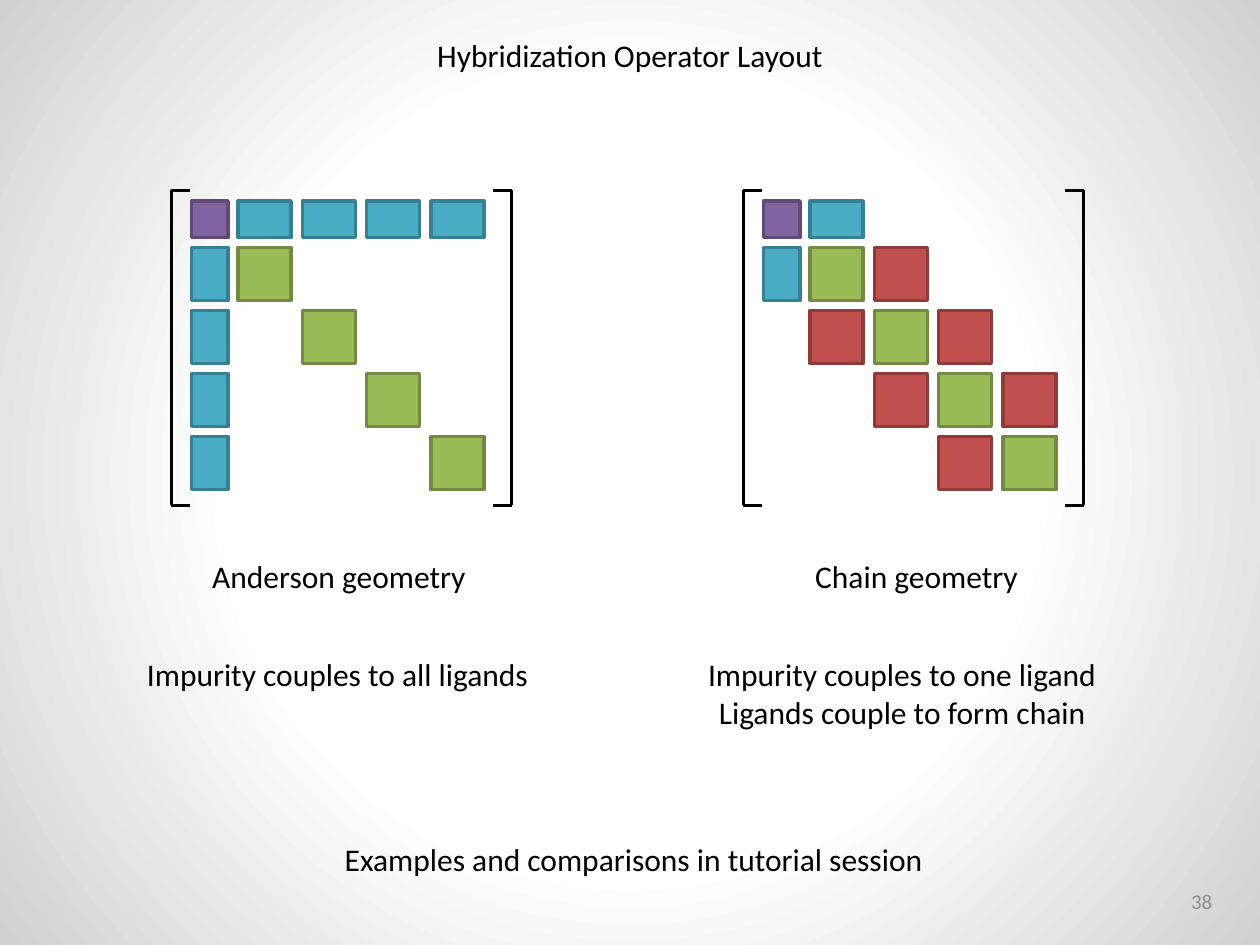
from dataclasses import dataclass

from pptx import Presentation
from pptx.dml.color import RGBColor
from pptx.enum.shapes import MSO_CONNECTOR, MSO_SHAPE
from pptx.enum.text import MSO_ANCHOR, MSO_AUTO_SIZE, PP_ALIGN
from pptx.oxml import parse_xml
from pptx.oxml.ns import nsdecls
from pptx.util import Inches, Pt


@dataclass(frozen=True)
class Theme:
    font: str = "Calibri"
    body: int = 18
    small: int = 12
    ink: str = "000000"
    grey: str = "8C8C8C"
    glow: str = "FFFFFF"
    edge: str = "D1D1D1"
    rim: float = 2
    stroke: float = 1.5


THEME = Theme()
# Fill and outline of each kind of block
BLOCKS = {
    "P": ("8064A2", "5F4A78"),  # impurity
    "C": ("4BACC6", "377F92"),  # impurity-ligand coupling
    "G": ("9BBB59", "738A42"),  # ligand
    "R": ("C0504D", "8E3B39"),  # ligand-ligand coupling
}
ANDERSON = ("PCCCC", "CG...", "C.G..", "C..G.", "C...G")
CHAIN = ("PC...", "CGR..", ".RGR.", "..RGR", "...RG")
COLS, ROWS = 100, 75  # slide grid, one tenth of an inch a step


def unit(*steps):
    """Turn grid steps into lengths."""
    return [Inches(step / 10) for step in steps]


def color(code):
    return RGBColor.from_string(code)


def paint(slide):
    """Give the slide a round glow, bright in the middle."""
    stops = ((0, THEME.glow), (51, THEME.glow), (100, THEME.edge))
    marks = "".join(
        f'<a:gs pos="{pos * 1000}"><a:srgbClr val="{code}"/></a:gs>'
        for pos, code in stops
    )
    slide.element.cSld.insert(0, parse_xml(
        f'<p:bg {nsdecls("p", "a")}><p:bgPr><a:gradFill rotWithShape="1">'
        f'<a:gsLst>{marks}</a:gsLst><a:path path="circle">'
        '<a:fillToRect l="50000" t="50000" r="50000" b="50000"/></a:path>'
        '</a:gradFill><a:effectLst/></p:bgPr></p:bg>'
    ))


def label(slide, box, *lines):
    frame = slide.shapes.add_textbox(*unit(*box)).text_frame
    frame.word_wrap = False
    frame.auto_size = MSO_AUTO_SIZE.SHAPE_TO_FIT_TEXT
    write(frame, lines, THEME.body, THEME.ink, PP_ALIGN.CENTER)


def number(slide, box, text):
    frame = slide.shapes.add_textbox(*unit(*box)).text_frame
    frame.word_wrap = True
    frame.vertical_anchor = MSO_ANCHOR.MIDDLE
    write(frame, [text], THEME.small, THEME.grey, PP_ALIGN.RIGHT)


def write(frame, lines, size, code, align):
    frame.text = "\n".join(lines)
    for par in frame.paragraphs:
        par.alignment = align
        par.font.name = THEME.font
        par.font.size = Pt(size)
        par.font.color.rgb = color(code)


def block(slide, box, kind):
    fill, rim = BLOCKS[kind]
    shape = slide.shapes.add_shape(MSO_SHAPE.RECTANGLE, *unit(*box))
    shape.shadow.inherit = False
    shape.fill.solid()
    shape.fill.fore_color.rgb = color(fill)
    shape.line.color.rgb = color(rim)
    shape.line.width = Pt(THEME.rim)


def bracket(slide, side, tip, top, foot):
    """Draw an upright at side, with two ticks that reach to tip."""
    group = slide.shapes.add_group_shape()
    for ends in ((side, top, side, foot),
                 (tip, foot, side, foot),
                 (tip, top, side, top)):
        line = group.shapes.add_connector(MSO_CONNECTOR.STRAIGHT, *unit(*ends))
        line.line.color.rgb = color(THEME.ink)
        line.line.width = Pt(THEME.stroke)
        line._element.spPr.append(parse_xml(f'<a:effectLst {nsdecls("a")}/>'))


def span(index, first, step):
    """Start and size of a cell: the first is narrow, the rest are even."""
    return (first, 2.9) if index == 0 else (first + 3.7 + step * (index - 1), 4.2)


def matrix(slide, box, cells):
    left, top, width, height = box
    for row, kinds in enumerate(cells):
        y, high = span(row, top + 0.85, 5)
        for col, kind in enumerate(kinds):
            if kind in BLOCKS:
                x, wide = span(col, left + 1.6, 5.1)
                block(slide, (x, y, wide, high), kind)
    right, foot, tick = left + width, top + height, 1.45
    bracket(slide, left, left + tick, top, foot)
    bracket(slide, right, right - tick, top, foot)


def main():
    deck = Presentation()
    deck.slide_width, deck.slide_height = unit(COLS, ROWS)
    slide = deck.slides.add_slide(deck.slide_layouts[6])
    paint(slide)
    label(slide, (33.5, 2.4, 33, 4), "Hybridization Operator Layout")
    matrix(slide, (13.6, 15.1, 27, 25), ANDERSON)
    matrix(slide, (59, 15.1, 27, 25), CHAIN)
    label(slide, (15.7, 43.7, 22.4, 4), "Anderson geometry")
    label(slide, (63.6, 43.7, 18.3, 4), "Chain geometry")
    label(slide, (10.5, 51.5, 32.6, 4), "Impurity couples to all ligands")
    label(slide, (55, 51.5, 33.2, 7.1),
          "Impurity couples to one ligand", "Ligands couple to form chain")
    label(slide, (26.1, 66.2, 48.4, 4),
          "Examples and comparisons in tutorial session")
    number(slide, (73.9, 69.5, 23.3, 4), "38")
    deck.save("out.pptx")


if __name__ == "__main__":
    main()
